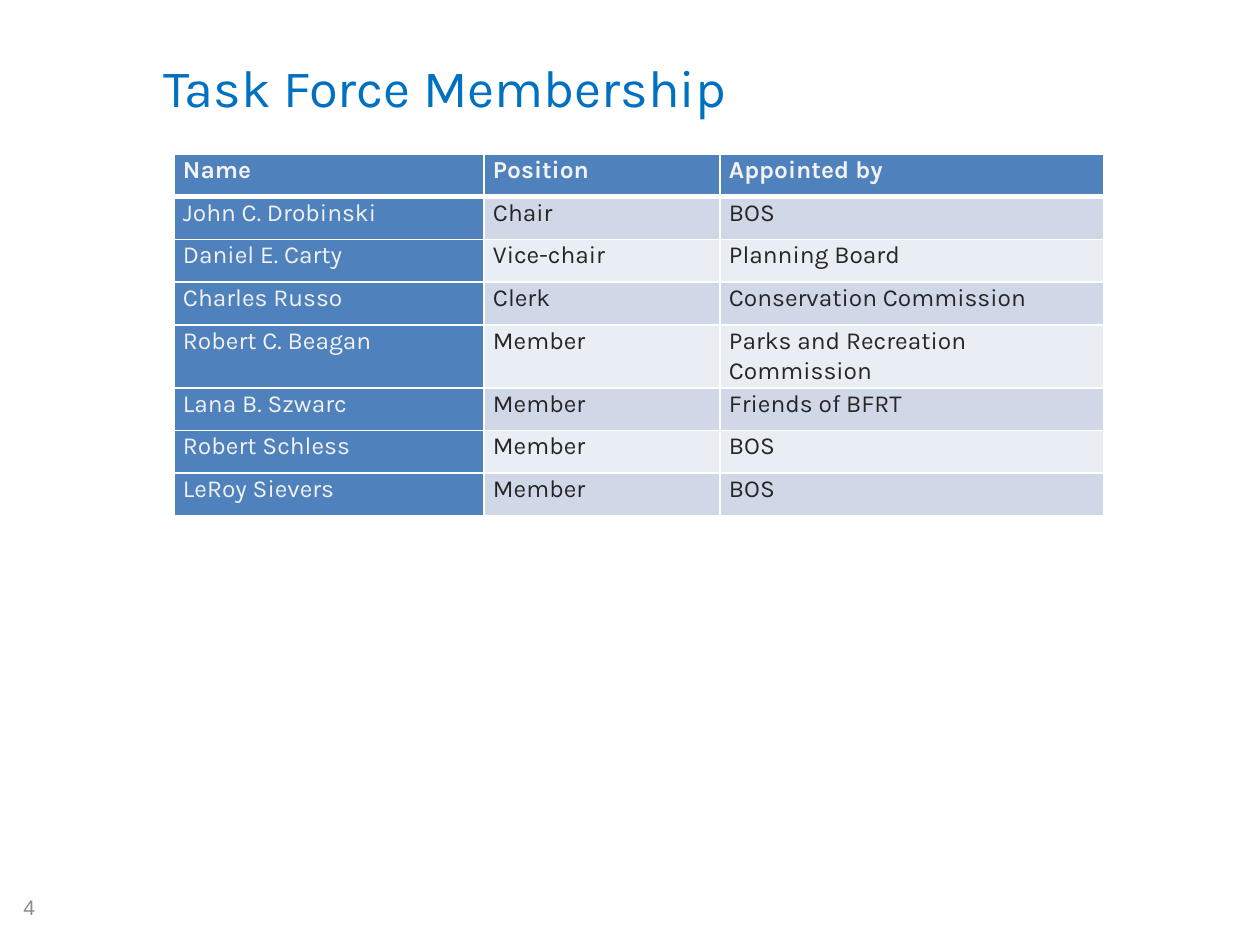
from dataclasses import dataclass

from lxml.etree import SubElement
from pptx import Presentation
from pptx.dml.color import RGBColor
from pptx.enum.text import MSO_ANCHOR, MSO_AUTO_SIZE, PP_ALIGN
from pptx.oxml.ns import qn
from pptx.util import Emu, Pt


def px(length):
    return Emu(round(length * 914400 / 126))


@dataclass(frozen=True)
class Theme:
    font: str = "Karla"
    number_font: str = "Arial"
    title_size: int = 30
    table_size: int = 14
    number_size: int = 12
    title: str = "0070C0"
    number: str = "8C8C8C"
    light_text: str = "F2F2F2"
    dark_text: str = "262626"
    accent: str = "4F81BD"
    bands: tuple = ("D0D8E8", "E9EDF4")
    border: str = "FFFFFF"


class SlideBuilder:
    def __init__(self, slide, theme):
        self.slide = slide
        self.theme = theme

    def add_text(self, frame, text, color, line_spacing=None, **font_format):
        paragraph = frame.paragraphs[0]
        paragraph.alignment = PP_ALIGN.LEFT
        paragraph.line_spacing = line_spacing
        run = paragraph.add_run()
        run.text = text
        for attribute, value in font_format.items():
            setattr(run.font, attribute, value)
        run.font.color.rgb = RGBColor.from_string(color)

    def title(self, text, left, top, width, height, **frame_format):
        heading = self.slide.shapes.title
        place = {"left": left, "top": top, "width": width, "height": height}
        for attribute, value in place.items():
            setattr(heading, attribute, px(value))
        frame = heading.text_frame
        for attribute, value in frame_format.items():
            setattr(frame, attribute, value)
        self.add_text(frame, text, self.theme.title,
                      name=self.theme.font, size=Pt(self.theme.title_size))

    def page_number(self, text, *place):
        frame = self.slide.shapes.add_textbox(*map(px, place)).text_frame
        frame.word_wrap = False
        frame.auto_size = MSO_AUTO_SIZE.SHAPE_TO_FIT_TEXT
        self.add_text(frame, text, self.theme.number,
                      name=self.theme.number_font, size=Pt(self.theme.number_size))

    def borders(self, cell, bottom_width):
        properties = cell._tc.get_or_add_tcPr()
        widths = {"a:lnL": 1, "a:lnR": 1, "a:lnT": 1, "a:lnB": bottom_width}
        for side, width in widths.items():
            line = SubElement(properties, qn(side), w=str(Pt(width)))
            fill = SubElement(line, qn("a:solidFill"))
            SubElement(fill, qn("a:srgbClr"), val=self.theme.border)

    def table(self, rows, column_widths, left, top, height):
        theme = self.theme
        place = (left, top, sum(column_widths), height)
        table = self.slide.shapes.add_table(
            len(rows), len(column_widths), *map(px, place)).table
        table.first_row = table.first_col = True
        for column, width in zip(table.columns, column_widths):
            column.width = px(width)
        margins = {"margin_left": px(9), "margin_right": px(9),
                   "margin_top": 0, "margin_bottom": 0}
        for row_index, row in enumerate(rows):
            is_header = row_index == 0
            for column_index, text in enumerate(row):
                cell = table.cell(row_index, column_index)
                for attribute, value in margins.items():
                    setattr(cell, attribute, value)
                self.borders(cell, 3 if is_header else 1)
                is_accent = is_header or column_index == 0
                fill = theme.accent if is_accent else theme.bands[(row_index - 1) % 2]
                cell.fill.solid()
                cell.fill.fore_color.rgb = RGBColor.from_string(fill)
                color = theme.light_text if is_accent else theme.dark_text
                self.add_text(cell.text_frame, text, color, line_spacing=1.07,
                              name=theme.font, size=Pt(theme.table_size), bold=is_header)


MEMBERS = [
    ("Name", "Position", "Appointed by"),
    ("John C. Drobinski", "Chair", "BOS"),
    ("Daniel E. Carty", "Vice-chair", "Planning Board"),
    ("Charles Russo", "Clerk", "Conservation Commission"),
    ("Robert C. Beagan", "Member", "Parks and Recreation Commission"),
    ("Lana B. Szwarc", "Member", "Friends of BFRT"),
    ("Robert Schless", "Member", "BOS"),
    ("LeRoy Sievers", "Member", "BOS"),
]


def main():
    presentation = Presentation()
    presentation.slide_width = px(1260)
    presentation.slide_height = px(945)
    slide = presentation.slides.add_slide(presentation.slide_layouts[5])
    builder = SlideBuilder(slide, Theme())

    # Page number
    builder.page_number("4", 11, 888, 52, 38)

    # Title, raised above the middle of its box by the bottom margin
    builder.title("Task Force Membership", 63, 38, 1072, 158,
                  vertical_anchor=MSO_ANCHOR.MIDDLE,
                  margin_left=px(100), margin_bottom=px(67))

    # Membership table
    builder.table(MEMBERS, (310, 236, 384), left=174, top=154, height=342)

    presentation.save("out.pptx")


if __name__ == "__main__":
    main()
